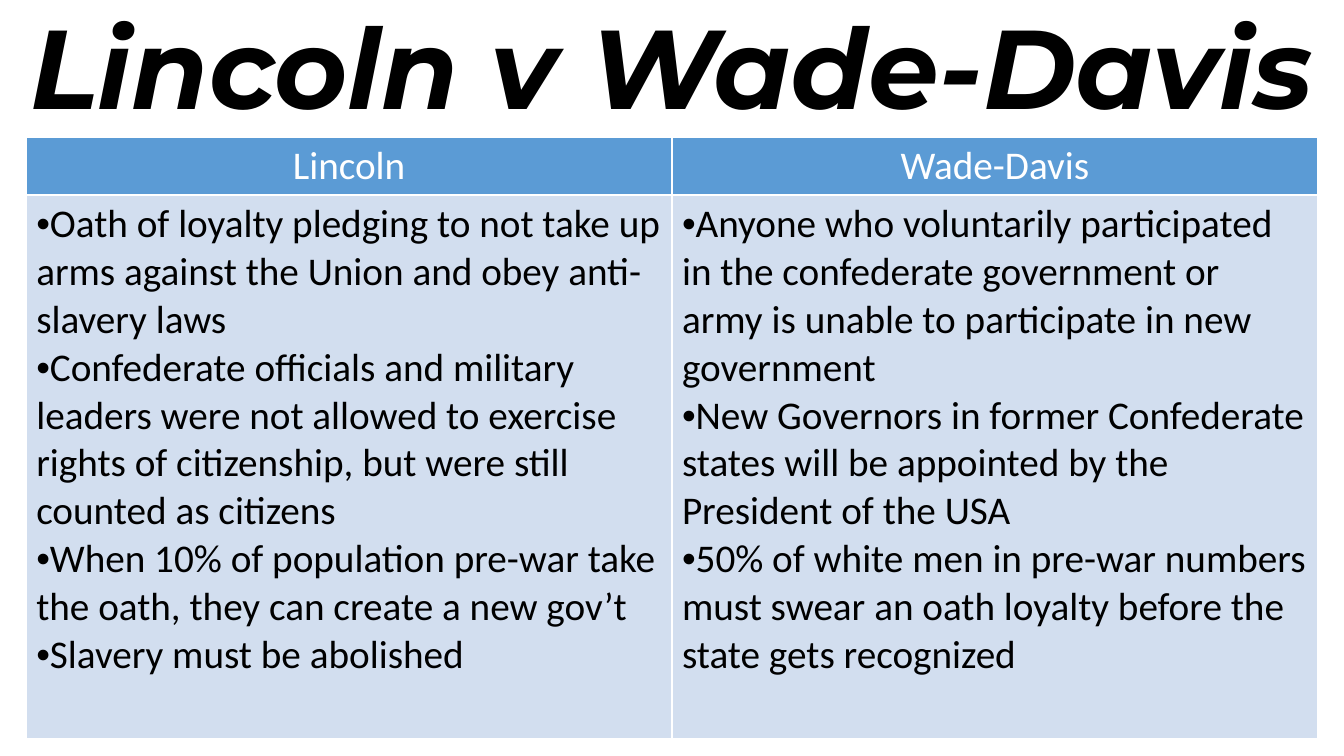
import lxml.etree
import pptx
import pptx.dml.color
import pptx.enum.text
import pptx.oxml.ns
import pptx.util

Inches, Pt = pptx.util.Inches, pptx.util.Pt
RGBColor = pptx.dml.color.RGBColor
PP_ALIGN = pptx.enum.text.PP_ALIGN
qn = pptx.oxml.ns.qn

BLACK = RGBColor(0x00, 0x00, 0x00)
WHITE = RGBColor(0xFF, 0xFF, 0xFF)
BLUE = RGBColor(0x5B, 0x9B, 0xD5)
PALE_BLUE = RGBColor(0xD2, 0xDE, 0xEF)

PLANS = {
    "Lincoln": [
        "Oath of loyalty pledging to not take up arms against the Union and obey anti-slavery laws",
        "Confederate officials and military leaders were not allowed to exercise rights of "
        "citizenship, but were still counted as citizens",
        "When 10% of population pre-war take the oath, they can create a new gov’t",
        "Slavery must be abolished",
    ],
    "Wade-Davis": [
        "Anyone who voluntarily participated in the confederate government or army is unable to "
        "participate in new government",
        "New Governors in former Confederate states will be appointed by the President of the USA",
        "50% of white men in pre-war numbers must swear an oath loyalty before the state gets "
        "recognized",
    ],
}


def style_run(r, font, size, color, bold=False, italic=False):
    """Set the font of a run."""
    r.font.name, r.font.size = font, Pt(size)
    r.font.bold, r.font.italic = bold, italic
    r.font.color.rgb = color


def add_bullet(p):
    """Give a paragraph a bullet without indent."""
    pPr = p._p.get_or_add_pPr()
    pPr.set("marL", "0")
    pPr.set("indent", "0")
    lxml.etree.SubElement(pPr, qn("a:buFont")).set("typeface", "Arial")
    lxml.etree.SubElement(pPr, qn("a:buChar")).set("char", "•")


def add_borders(cell, color, width):
    """Draw a solid line on each side of a cell."""
    tcPr = cell._tc.get_or_add_tcPr()
    for i, side in enumerate(("a:lnL", "a:lnR", "a:lnT", "a:lnB")):
        ln = lxml.etree.Element(qn(side), w=str(Pt(width)))
        fill = lxml.etree.SubElement(ln, qn("a:solidFill"))
        lxml.etree.SubElement(fill, qn("a:srgbClr")).set("val", str(color))
        tcPr.insert(i, ln)


def fill_cell(cell, lines, fill, color, header):
    """Write a heading or a bulleted list into a cell."""
    cell.fill.solid()
    cell.fill.fore_color.rgb = fill
    add_borders(cell, WHITE, 1)
    tf = cell.text_frame
    tf.text = "\n".join(lines)
    for p in tf.paragraphs:
        if header:
            p.alignment = PP_ALIGN.CENTER
        else:
            add_bullet(p)
        style_run(p.runs[0], "Calibri", 28, color)


def place_title(s, text, left, top, width, height):
    """Place the title placeholder in the given box."""
    sp = s.shapes.title
    sp.left, sp.top, sp.width, sp.height = left, top, width, height
    tf = sp.text_frame
    tf.text = text
    tf.word_wrap = True
    tf.auto_size = pptx.enum.text.MSO_AUTO_SIZE.NONE
    tf.vertical_anchor = pptx.enum.text.MSO_ANCHOR.MIDDLE
    p = tf.paragraphs[0]
    p.alignment, p.line_spacing = PP_ALIGN.CENTER, 0.9
    style_run(p.runs[0], "Montserrat", 80, BLACK, bold=True, italic=True)


def add_comparison(s, plans, left, top, width, height):
    """Add a table with one column for each plan."""
    header_height = Inches(0.56)
    table = s.shapes.add_table(2, len(plans), left, top, width, height).table
    table.rows[0].height = header_height
    table.rows[1].height = height - header_height
    for col, (name, points) in enumerate(plans.items()):
        fill_cell(table.cell(0, col), [name], BLUE, WHITE, True)
        fill_cell(table.cell(1, col), points, PALE_BLUE, BLACK, False)


def main():
    """Build and save the slide."""
    prs = pptx.Presentation()
    prs.slide_width, prs.slide_height = Inches(13.33), Inches(7.5)
    s = prs.slides.add_slide(prs.slide_layouts[5])
    place_title(s, "Lincoln v Wade-Davis", 0, 0, prs.slide_width, Inches(1.45))
    add_comparison(s, PLANS, Inches(0.26), Inches(1.36), Inches(12.81), Inches(5.95))
    prs.save("out.pptx")


if __name__ == "__main__":
    main()
